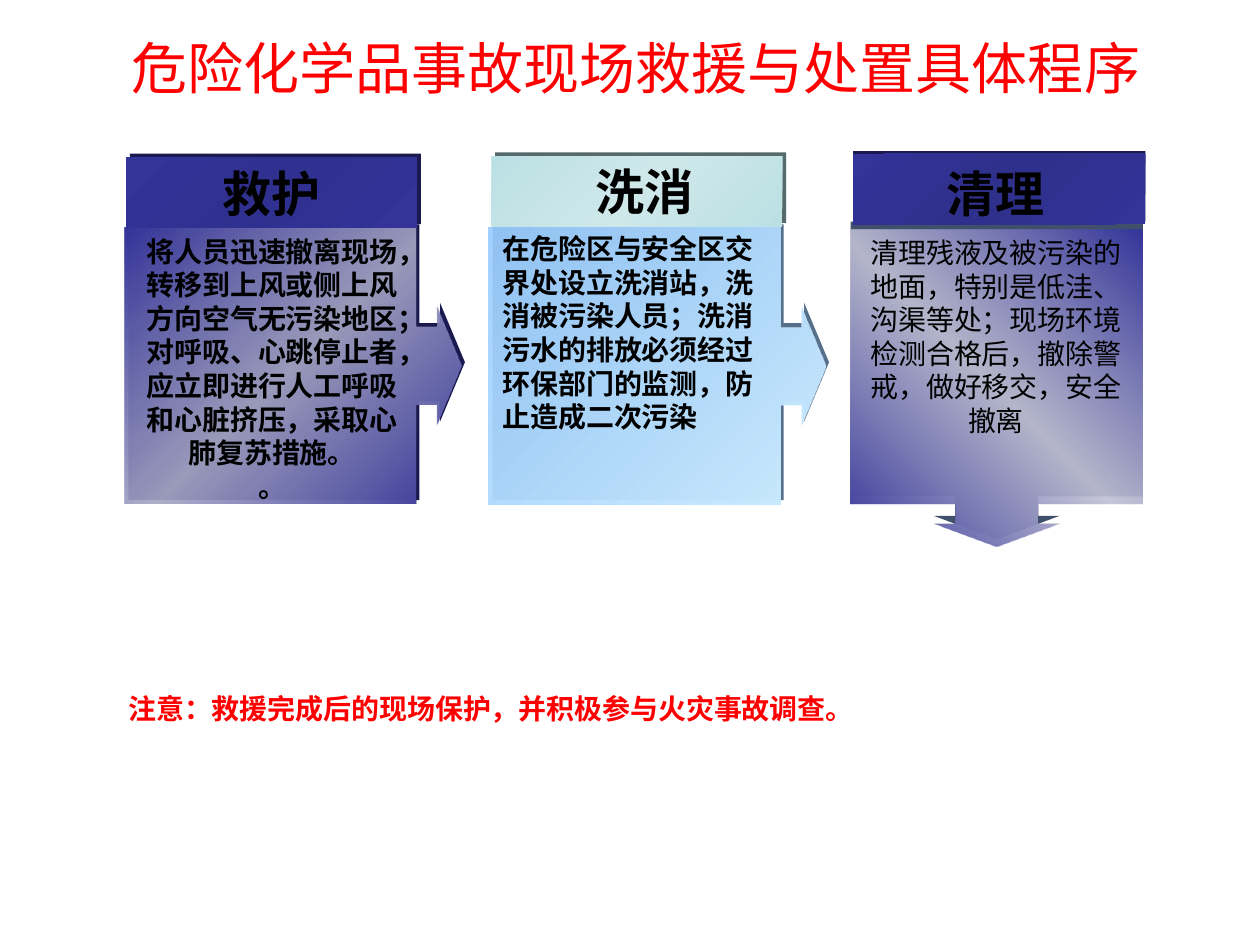
from lxml import etree
from pptx import Presentation
from pptx.dml.color import RGBColor
from pptx.enum import shapes, text
from pptx.oxml import ns
from pptx.util import Inches, Pt

RECT = shapes.MSO_SHAPE.RECTANGLE
CALL = shapes.MSO_SHAPE.RIGHT_ARROW_CALLOUT
MID = text.PP_ALIGN.CENTER
LEFT = text.PP_ALIGN.LEFT
BOLD = {"size": Pt(16), "bold": True}
HEAD = {"size": Pt(28), "bold": True}
BLUE = "333399"


def color(code):
    return RGBColor.from_string(code)


def write(frame, lines, look, hue="000000", align=MID, wrap=True):
    frame.word_wrap = wrap
    for i, line in enumerate(lines):
        para = frame.paragraphs[0] if i == 0 else frame.add_paragraph()
        para.alignment = align
        run = para.add_run()
        run.text = line
        for key, value in {"name": "Arial", **look}.items():
            setattr(run.font, key, value)
        run.font.color.rgb = color(hue)


def label(slide, area, lines, look, **more):
    box = slide.shapes.add_textbox(*map(Inches, area))
    write(box.text_frame, lines, look, **more)


def shade(shape, stops):
    shape.fill.gradient()
    grad = shape.fill._fill._gradFill
    items = grad.find(ns.qn("a:gsLst"))
    for old in list(items):
        items.remove(old)
    for spot, hue, solid in stops:
        stop = etree.SubElement(items, ns.qn("a:gs"), pos=str(spot * 1000))
        tint = etree.SubElement(stop, ns.qn("a:srgbClr"), val=hue)
        if solid < 100:
            etree.SubElement(tint, ns.qn("a:alpha"), val=str(solid * 1000))
    grad.find(ns.qn("a:lin")).set("ang", str(45 * 60000))


def plain(slide, kind, area, turn, bends):
    shape = slide.shapes.add_shape(kind, *map(Inches, area))
    shape.shadow.inherit = False
    shape.line.fill.background()
    shape.rotation = turn
    for i, bend in enumerate(bends):
        shape.adjustments[i] = bend
    return shape


def block(slide, kind, area, stops, edge, shift, turn=0, bends=()):
    x, y, w, h = area
    back = plain(slide, kind, (x + shift[0], y + shift[1], w, h), turn, bends)
    back.fill.solid()
    back.fill.fore_color.rgb = color(edge)
    front = plain(slide, kind, area, turn, bends)
    shade(front, stops)
    return front


def band(outer, inner, solid=100):
    return [(0, outer, 100), (50, inner, solid), (100, outer, 100)]


def main():
    deck = Presentation()
    deck.slide_width, deck.slide_height = Inches(10), Inches(7.5)
    slide = deck.slides.add_slide(deck.slide_layouts[5])

    title = slide.shapes.title
    title.left, title.top, title.width, title.height = map(Inches, (0.46, 0.15, 9.18, 0.77))
    title.text_frame.vertical_anchor = text.MSO_ANCHOR.MIDDLE
    write(title.text_frame, ["危险化学品事故现场救援与处置具体程序"], {"size": Pt(32)}, "FF0000")

    side, top = (0.03, -0.03), (0, -0.06)
    sky = [(0, "99CCFF", 90), (100, "CCECFF", 100)]
    cards = [
        ((0.99, 1.81, 2.67, 2.19), band(BLUE, "A8A8C6", 90), "1A1A50", side, 0, 0.09),
        ((3.88, 1.81, 2.67, 2.19), sky, "56708C", side, 0, 0.09),
        ((6.65, 1.92, 2.52, 2.32), band(BLUE, "C1C1D5", 90), "40506B", top, 90, 0.08),
    ]
    for area, stops, edge, shift, turn, tip in cards:
        block(slide, CALL, area, stops, edge, shift, turn, (0.284, 0.215, tip, 0.865))

    heads = [
        ((1, 1.25, 2.31, 0.56), band(BLUE, "303091"), "1A1A50", side),
        ((3.9, 1.24, 2.31, 0.56), band("BBE0E3", "CEE8EA"), "56696B", side),
        ((6.77, 1.22, 2.32, 0.56), band(BLUE, "2F2F8C"), "1A1A50", (0, -0.02)),
    ]
    first, *rest = [block(slide, RECT, *head) for head in heads]
    first.text_frame.vertical_anchor = text.MSO_ANCHOR.MIDDLE
    write(first.text_frame, ["救护"], HEAD, wrap=False)
    label(slide, (4.25, 1.23, 1.73, 0.57), ["洗消"], HEAD)
    label(slide, (6.86, 1.25, 2.08, 0.57), ["清理"], HEAD)

    label(slide, (0.97, 1.81, 2.38, 2.52), [
        "将人员迅速撤离现场，转移到上风或侧上风方向空气无污染地区；",
        "对呼吸、心跳停止者，应立即进行人工呼吸和心脏挤压，采取心肺复苏措施。",
        "。",
    ], BOLD)
    label(slide, (3.89, 1.79, 2.3, 1.72), [
        "在危险区与安全区交界处设立洗消站，洗消被污染人员；洗消污水的排放必须经过环保部门的监测，防止造成二次污染",
    ], BOLD, align=LEFT)
    label(slide, (6.79, 1.82, 2.23, 1.72), [
        "清理残液及被污染的地面，特别是低洼、沟渠等处；现场环境检测合格后，撤除警戒，做好移交，安全撤离",
    ], {"size": Pt(16)})
    label(slide, (0.92, 5.44, 8.3, 0.4), [
        "注意：救援完成后的现场保护，并积极参与火灾事故调查。",
    ], BOLD, hue="FF0000", align=LEFT)

    deck.save("out.pptx")


if __name__ == "__main__":
    main()
